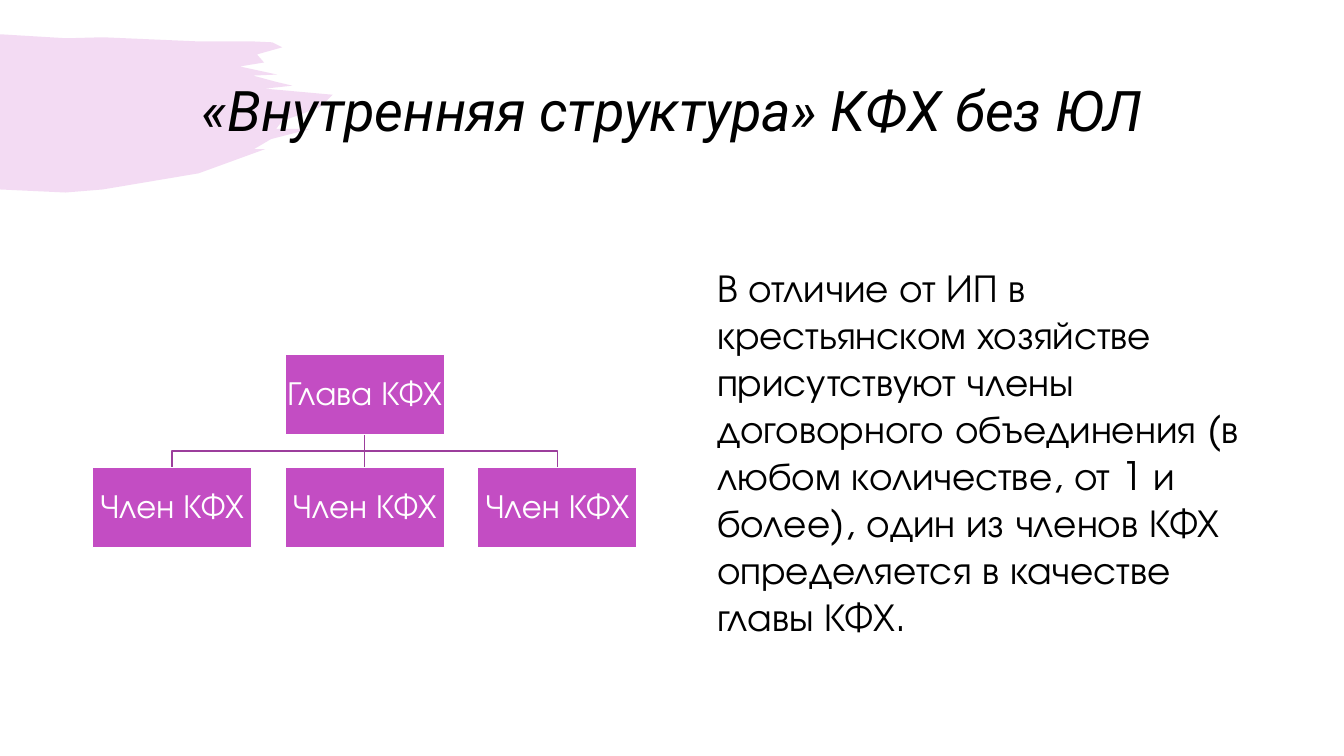
from dataclasses import dataclass

from pptx import Presentation
from pptx.dml.color import RGBColor as RGB
from pptx.enum.shapes import MSO_CONNECTOR as LINK, MSO_SHAPE as SHAPE
from pptx.enum.text import MSO_ANCHOR as ANCHOR, MSO_AUTO_SIZE as FIT, PP_ALIGN as ALIGN
from pptx.oxml.xmlchemy import OxmlElement
from pptx.util import Pt


@dataclass(frozen=True)
class Theme:
    accent: RGB = RGB.from_string("C34DC3")
    link: RGB = RGB.from_string("9C3E9C")
    text: RGB = RGB.from_string("000000")
    light: RGB = RGB.from_string("FFFFFF")
    title_font: str = "Roboto"
    body_font: str = "TeX Gyre Adventor"
    title_size: int = 40
    body_size: int = 28
    node_size: int = 24
    line: int = 1


THEME = Theme()

# Brush outline in steps of 0.72 pt: smooth top, ragged right end, sloping bottom
BRUSH = [
    (0, 0), (66, 4), (102, 3), (194, 7), (248, 7), (270, 8), (280, 13),
    (255, 20), (262, 28), (238, 32), (275, 40), (251, 41), (273, 47), (290, 51),
    (263, 54), (330, 60), (318, 72), (300, 79), (280, 86), (274, 94), (308, 94),
    (269, 104), (252, 114), (263, 114), (197, 138), (102, 154), (65, 157), (0, 154),
]


def set_text(shape, text, margins=(7.2, 3.6), para=None, **font):
    """Fill a shape with one formatted paragraph."""
    tf = shape.text_frame
    side, edge = (Pt(m) for m in margins)
    frame = dict(word_wrap=True, auto_size=FIT.NONE, vertical_anchor=ANCHOR.MIDDLE,
                 margin_left=side, margin_right=side, margin_top=edge, margin_bottom=edge)
    p = tf.paragraphs[0]
    r = p.add_run()
    r.text = text
    r.font.color.rgb = font.pop("color")
    for target, values in ((tf, frame), (p, para or {}), (r.font, font)):
        for name, value in values.items():
            setattr(target, name, value)


def set_fill(shape, color):
    shape.shadow.inherit = False
    shape.fill.solid()
    shape.fill.fore_color.rgb = color


def set_line(shape, color):
    shape.line.color.rgb = color
    shape.line.width = Pt(THEME.line)


def add_brush(s, left, top):
    fb = s.shapes.build_freeform(*BRUSH[0], scale=Pt(0.72))
    fb.add_line_segments(BRUSH[1:], close=True)
    sp = fb.convert_to_shape(Pt(left), Pt(top))
    set_fill(sp, THEME.accent)
    sp.line.fill.background()
    alpha = OxmlElement("a:alpha")
    alpha.set("val", "20000")
    sp.element.xpath(".//a:solidFill/a:srgbClr")[0].append(alpha)
    s.shapes.title.element.addprevious(sp.element)  # behind the title


def add_title(s, text, left, top, width, height):
    title = s.shapes.title
    for name, value in dict(left=left, top=top, width=width, height=height).items():
        setattr(title, name, Pt(value))
    set_text(title, text, para=dict(alignment=ALIGN.CENTER, line_spacing=0.9),
             name=THEME.title_font, size=Pt(THEME.title_size), italic=True, color=THEME.text)


def add_node(s, text, left, top, width, height):
    sp = s.shapes.add_shape(SHAPE.RECTANGLE, Pt(left), Pt(top), Pt(width), Pt(height))
    set_fill(sp, THEME.accent)
    set_line(sp, THEME.light)
    set_text(sp, text, margins=(1, 1), para=dict(alignment=ALIGN.CENTER, line_spacing=0.9),
             name=THEME.body_font, size=Pt(THEME.node_size), color=THEME.light)


def add_link(s, x1, y1, x2, y2):
    """Join parent to child: straight when aligned, otherwise with two bends."""
    if abs(x1 - x2) < 0.01:
        link = s.shapes.add_connector(LINK.STRAIGHT, Pt(x1), Pt(y1), Pt(x2), Pt(y2))
        link.element.spPr.append(OxmlElement("a:effectLst"))
    else:
        middle = (y1 + y2) / 2
        fb = s.shapes.build_freeform(Pt(x1), Pt(y1))
        bends = [(x1, middle), (x2, middle), (x2, y2)]
        fb.add_line_segments([(Pt(x), Pt(y)) for x, y in bends], close=False)
        link = fb.convert_to_shape()
        link.shadow.inherit = False
        link.fill.background()
    set_line(link, THEME.link)


def add_org_chart(s, head, members, left, top, width, height):
    gap_ratio, n = 0.21, len(members)
    node_w = width / (n + (n - 1) * gap_ratio)
    node_h, gap = node_w / 2, node_w * gap_ratio
    head_x = left + (width - node_w) / 2
    head_y = top + (height - 2 * node_h - gap) / 2
    member_y = head_y + node_h + gap
    columns = [left + i * (node_w + gap) for i in range(n)]
    for x in columns:
        add_link(s, head_x + node_w / 2, head_y + node_h, x + node_w / 2, member_y)
    add_node(s, head, head_x, head_y, node_w, node_h)
    for x, member in zip(columns, members):
        add_node(s, member, x, member_y, node_w, node_h)


def add_body(s, text, left, top, width, height):
    tb = s.shapes.add_textbox(Pt(left), Pt(top), Pt(width), Pt(height))
    set_text(tb, text, para=dict(space_before=Pt(10)),
             name=THEME.body_font, size=Pt(THEME.body_size), color=THEME.text)


def main():
    prs = Presentation()
    prs.slide_width, prs.slide_height = Pt(960), Pt(540)
    s = prs.slides.add_slide(prs.slide_layouts[5])

    # Heading over the brush stroke
    add_brush(s, 0, 24.5)
    add_title(s, "«Внутренняя структура» КФХ без ЮЛ", 66, 28.8, 828, 104.4)

    # Structure on the left, explanation on the right
    add_org_chart(s, "Глава КФХ", ["Член КФХ"] * 3, 66, 158.4, 389, 327.6)
    add_body(s, "В отличие от ИП в крестьянском хозяйстве присутствуют члены договорного "
                "объединения (в любом количестве, от 1 и более), один из членов КФХ "
                "определяется в качестве главы КФХ.", 505.2, 158.4, 389.5, 327.6)
    prs.save("out.pptx")


if __name__ == "__main__":
    main()
